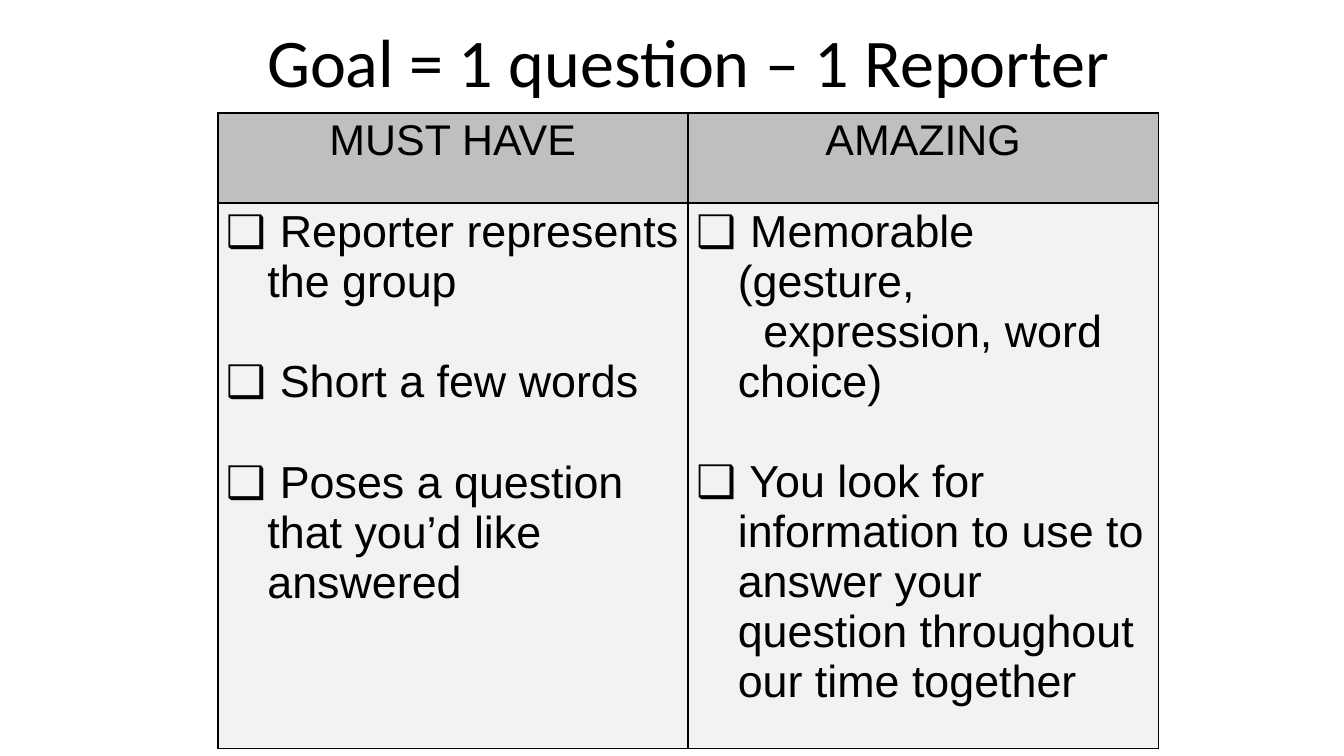
from dataclasses import dataclass

from lxml.etree import SubElement
from pptx import Presentation
from pptx.dml.color import RGBColor
from pptx.enum.text import MSO_ANCHOR, PP_ALIGN
from pptx.oxml import parse_xml
from pptx.oxml.ns import nsdecls, qn
from pptx.util import Inches, Pt


@dataclass(frozen=True)
class Theme:
    ink: str = "000000"
    header_fill: str = "BFBFBF"
    body_fill: str = "F2F2F2"
    title_font: str = "Calibri"
    table_font: str = "Arial"
    title_size: float = 36.5
    header_size: float = 23
    body_size: float = 24
    item_gap: float = 27
    border: float = 1


THEME = Theme()
INDENT = 0.31

# Each item is a bulleted line, followed by any unbulleted lines
COLUMNS = {
    "MUST HAVE": [
        [" Reporter represents the group"],
        [" Short a few words"],
        [" Poses a question that you’d like answered"],
    ],
    "AMAZING": [
        [" Memorable (gesture,", "expression, word choice)"],
        [" You look for information to use to answer your question "
         "throughout our time together"],
    ],
}


def add_span(para, text, font, size):
    span = para.add_run()
    span.text = text
    span.font.name = font
    span.font.size = Pt(size)
    span.font.color.rgb = RGBColor.from_string(THEME.ink)


def set_indent(para, first_line, bullet=None):
    properties = para._p.get_or_add_pPr()
    properties.set("marL", str(Inches(INDENT)))
    properties.set("indent", str(Inches(first_line)))
    if bullet:
        color = SubElement(properties, qn("a:buClr"))
        SubElement(color, qn("a:srgbClr"), val=THEME.ink)
        SubElement(properties, qn("a:buFont"), typeface=THEME.table_font)
        SubElement(properties, qn("a:buChar"), char=bullet)
    else:
        SubElement(properties, qn("a:buNone"))


def style_cell(cell, fill):
    cell.margin_left = cell.margin_right = Inches(0.06)
    cell.margin_top = cell.margin_bottom = Inches(0.03)
    cell.vertical_anchor = MSO_ANCHOR.TOP
    cell.fill.solid()
    cell.fill.fore_color.rgb = RGBColor.from_string(fill)
    # Borders come before the fill in the cell properties
    properties = cell._tc.get_or_add_tcPr()
    for position, side in enumerate(("lnL", "lnR", "lnT", "lnB")):
        properties.insert(position, parse_xml(
            f'<a:{side} {nsdecls("a")} w="{Pt(THEME.border)}"><a:solidFill>'
            f'<a:srgbClr val="{THEME.ink}"/></a:solidFill></a:{side}>'))


def add_title(page, text):
    box = page.shapes.add_textbox(Inches(1.81), Inches(0), Inches(6.62), Inches(0.9))
    frame = box.text_frame
    frame.word_wrap = True
    frame.vertical_anchor = MSO_ANCHOR.MIDDLE
    frame.margin_left = frame.margin_right = Inches(0.07)
    frame.margin_top = frame.margin_bottom = Inches(0.04)
    para = frame.paragraphs[0]
    para.alignment = PP_ALIGN.CENTER
    add_span(para, text, THEME.title_font, THEME.title_size)


def fill_header(cell, text):
    style_cell(cell, THEME.header_fill)
    para = cell.text_frame.paragraphs[0]
    para.alignment = PP_ALIGN.CENTER
    add_span(para, text, THEME.table_font, THEME.header_size)


def fill_checklist(cell, items):
    style_cell(cell, THEME.body_fill)
    frame = cell.text_frame
    para = frame.paragraphs[0]
    for item_number, lines in enumerate(items):
        for line_number, line in enumerate(lines):
            if item_number or line_number:
                para = frame.add_paragraph()
            last_line = line_number == len(lines) - 1
            last_item = item_number == len(items) - 1
            para.space_after = Pt(THEME.item_gap if last_line and not last_item else 0)
            if line_number == 0:
                set_indent(para, -INDENT, "❑")
            else:
                set_indent(para, 0.19)
            add_span(para, line, THEME.table_font, THEME.body_size)


def add_criteria_table(page):
    frame = page.shapes.add_table(2, len(COLUMNS), Inches(1.62), Inches(0.84),
                                  Inches(7), Inches(4.73))
    table = frame.table
    table.rows[0].height = Inches(0.67)
    table.rows[1].height = Inches(4.06)
    for column, (heading, items) in enumerate(COLUMNS.items()):
        fill_header(table.cell(0, column), heading)
        fill_checklist(table.cell(1, column), items)


def main():
    deck = Presentation()
    # Widescreen, 16 to 9
    deck.slide_width = Inches(10)
    deck.slide_height = Inches(10) * 9 // 16
    page = deck.slides.add_slide(deck.slide_layouts[6])
    add_title(page, "Goal = 1 question – 1 Reporter")
    add_criteria_table(page)
    deck.save("out.pptx")


if __name__ == "__main__":
    main()
